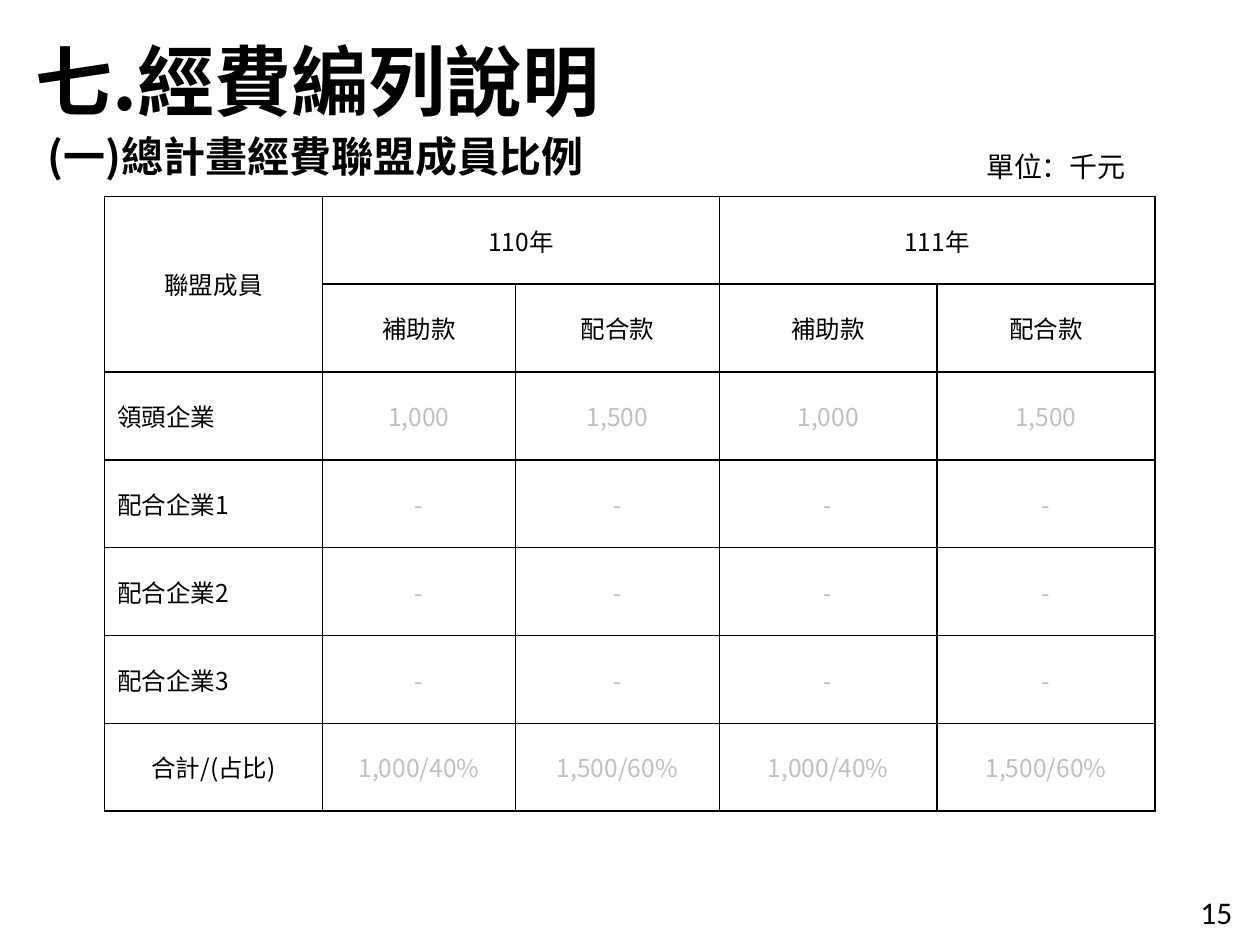
import lxml.etree
import pptx
import pptx.dml.color
import pptx.enum.text
import pptx.oxml.ns
import pptx.util

Cm = pptx.util.Cm
Pt = pptx.util.Pt
qn = pptx.oxml.ns.qn
ALIGN = pptx.enum.text.PP_ALIGN
MIDDLE = pptx.enum.text.MSO_ANCHOR.MIDDLE
BLACK = pptx.dml.color.RGBColor(0x00, 0x00, 0x00)
GREY = pptx.dml.color.RGBColor(0xBF, 0xBF, 0xBF)
CJK = "Noto Sans CJK SC"


def add_run(p, text, size, color=BLACK, bold=False, font=CJK):
    r = p.add_run()
    r.text = text
    r.font.size = Pt(size)
    r.font.bold = bold
    r.font.color.rgb = color
    r.font.name = font
    ea = lxml.etree.SubElement(r.font._element, qn("a:ea"))
    ea.set("typeface", font)


def add_borders(cell):
    tcPr = cell._tc.get_or_add_tcPr()
    for i, side in enumerate(("a:lnL", "a:lnR", "a:lnT", "a:lnB")):
        ln = lxml.etree.Element(qn(side), w=str(Pt(1)))
        fill = lxml.etree.SubElement(ln, qn("a:solidFill"))
        lxml.etree.SubElement(fill, qn("a:srgbClr"), val=str(BLACK))
        tcPr.insert(i, ln)


prs = pptx.Presentation()
prs.slide_width = Cm(25.4)
prs.slide_height = Cm(19.05)
s = prs.slides.add_slide(prs.slide_layouts[6])

labels = [
    ("七.經費編列說明", 0.46, -0.38, 17.8, 2.74, 44, True, CJK, 1.5),
    ("單位：千元", 19.63, 2.9, 4.32, 0.94, 16, False, CJK, 1),
    ("15", 23.95, 17.88, 1.45, 1.02, 18, False, "Calibri", 1),
    ("(一)總計畫經費聯盟成員比例", 0.71, 2.51, 13.9, 1.27, 24, True, CJK, 1),
]
for text, left, top, width, height, size, bold, font, spacing in labels:
    sp = s.shapes.add_textbox(Cm(left), Cm(top), Cm(width), Cm(height))
    tf = sp.text_frame
    tf.word_wrap = True
    p = tf.paragraphs[0]
    p.line_spacing = spacing
    add_run(p, text, size, bold=bold, font=font)

subheads = ["補助款", "配合款"]
rows = [
    ["聯盟成員", "110年", "", "111年", ""],
    [""] + subheads * 2,
    ["領頭企業"] + ["1,000", "1,500"] * 2,
    ["配合企業1"] + ["-"] * 4,
    ["配合企業2"] + ["-"] * 4,
    ["配合企業3"] + ["-"] * 4,
    ["合計/(占比)"] + ["1,000/40%", "1,500/60%"] * 2,
]
widths = [4.39, 3.89, 4.11, 4.39, 4.39]
row_height = 1.77

sp = s.shapes.add_table(len(rows), len(widths), Cm(2.11), Cm(3.96),
                        Cm(sum(widths)), Cm(row_height * len(rows)))
table = sp.table
table.first_row = False
table.horz_banding = False
for column, width in zip(table.columns, widths):
    column.width = Cm(width)
for row in table.rows:
    row.height = Cm(row_height)

for i, row in enumerate(rows):
    for j, text in enumerate(row):
        cell = table.cell(i, j)
        cell.fill.background()
        cell.vertical_anchor = MIDDLE
        add_borders(cell)
        if text:
            p = cell.text_frame.paragraphs[0]
            is_member = j == 0 and 2 <= i < len(rows) - 1
            p.alignment = ALIGN.LEFT if is_member else ALIGN.CENTER
            add_run(p, text, 14, GREY if i >= 2 and j else BLACK)

table.cell(0, 0).merge(table.cell(1, 0))
for j in (1, 3):
    table.cell(0, j).merge(table.cell(0, j + 1))

prs.save("out.pptx")
